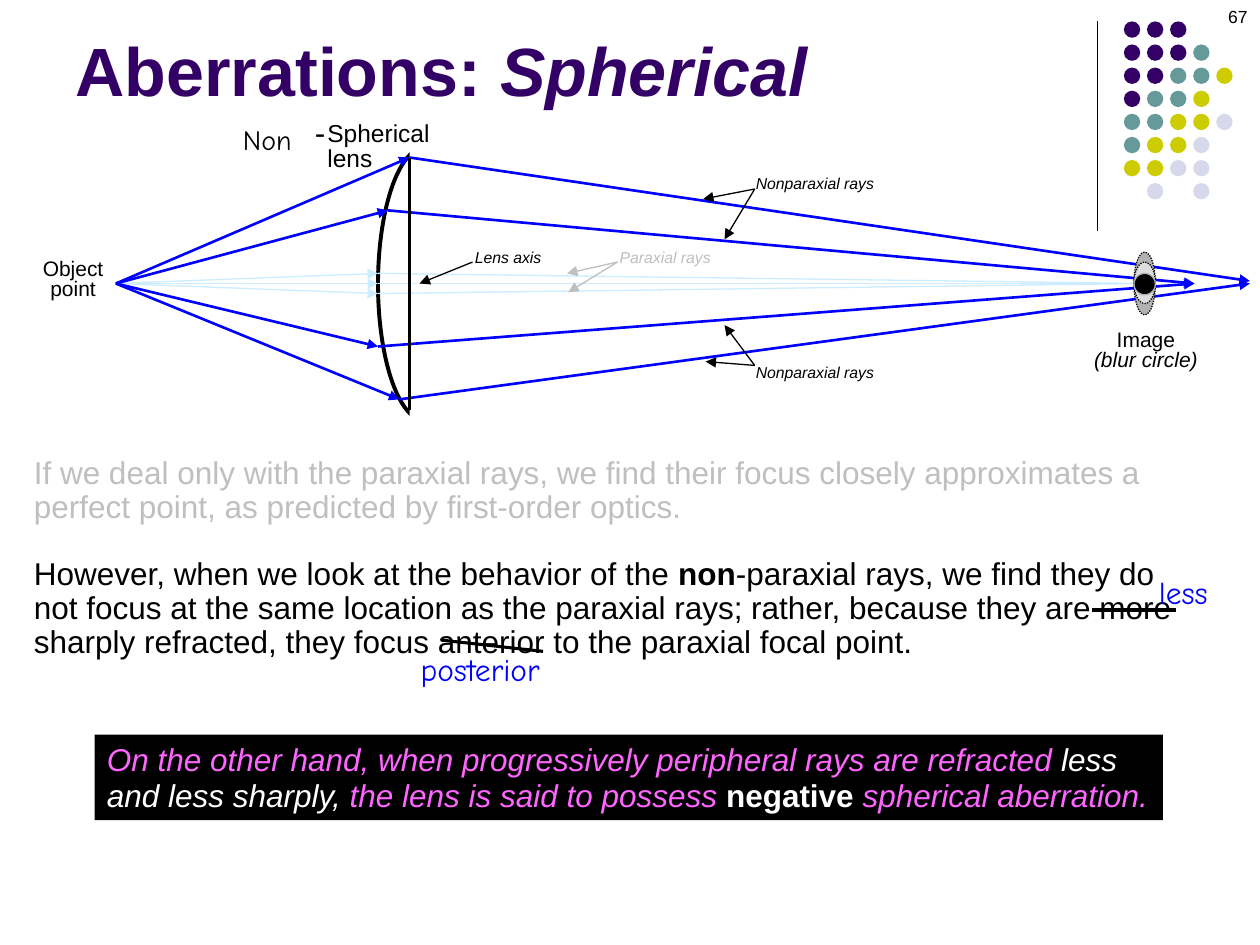
from dataclasses import dataclass

from lxml.etree import SubElement
from pptx import Presentation
from pptx.dml.color import RGBColor
from pptx.enum.dml import MSO_LINE
from pptx.enum.shapes import MSO_CONNECTOR, MSO_SHAPE
from pptx.enum.text import MSO_ANCHOR, PP_ALIGN
from pptx.oxml.ns import qn
from pptx.util import Inches, Pt


@dataclass(frozen=True)
class Theme:
    font: str = "Arial"
    hand: str = "Comic Neue"
    black: str = "000000"
    white: str = "FFFFFF"
    purple: str = "330066"
    teal: str = "669999"
    olive: str = "CCCC00"
    lilac: str = "D8D8EC"
    ray: str = "0000FF"
    paraxial: str = "CCECFF"
    faded: str = "BFBFBF"
    grey: str = "B2B2B2"
    pale: str = "DDDDDD"
    pink: str = "FF66FF"
    title: float = 39
    body: float = 18
    hand_note: float = 16
    lens: float = 14
    label: float = 12
    small: float = 10
    tag: float = 9
    thin: float = 0.75
    thick: float = 2.25


class Deck:
    """Draw styled elements on the current slide."""

    def __init__(self, theme):
        self.theme = theme
        self.prs = Presentation()
        self.prs.slide_width, self.prs.slide_height = Inches(10), Inches(7.5)
        self.slide = None

    def add_slide(self):
        self.slide = self.prs.slides.add_slide(self.prs.slide_layouts[6])

    def shape(self, kind, box, fill=None, line=None, width=0.75, dash=None):
        sp = self.slide.shapes.add_shape(kind, *map(Inches, box))
        sp.shadow.inherit = False
        if fill:
            sp.fill.solid()
            sp.fill.fore_color.rgb = RGBColor.from_string(fill)
        else:
            sp.fill.background()
        if line:
            sp.line.color.rgb = RGBColor.from_string(line)
            sp.line.width = Pt(width)
            if dash:
                sp.line.dash_style = dash
        else:
            sp.line.fill.background()
        return sp

    def line(self, start, end, color, width=0.75, arrow=False):
        ends = map(Inches, (*start, *end))
        cxn = self.slide.shapes.add_connector(MSO_CONNECTOR.STRAIGHT, *ends)
        cxn.line.color.rgb = RGBColor.from_string(color)
        cxn.line.width = Pt(width)
        if arrow:
            SubElement(cxn._element.spPr.find(qn("a:ln")), qn("a:tailEnd"), type="triangle")
        SubElement(cxn._element.spPr, qn("a:effectLst"))

    def fill_text(self, sp, paragraphs, size, color, font=None, align=PP_ALIGN.LEFT,
                  spacing=None, wrap=False, anchor=MSO_ANCHOR.TOP):
        tf = sp.text_frame
        tf.word_wrap, tf.vertical_anchor = wrap, anchor
        for i, runs in enumerate(paragraphs):
            p = tf.add_paragraph() if i else tf.paragraphs[0]
            p.alignment, p.line_spacing = align, spacing
            for text, style, run_color in runs:
                r = p.add_run()
                r.text = text
                r.font.name, r.font.size = font or self.theme.font, Pt(size)
                r.font.bold, r.font.italic = "b" in style, "i" in style
                r.font.color.rgb = RGBColor.from_string(run_color or color)

    def text(self, box, paragraphs, size, color, **options):
        sp = self.slide.shapes.add_textbox(*map(Inches, box))
        self.fill_text(sp, paragraphs, size, color, **options)

    def dots(self, left, top, pitch, size, rows, colors):
        for y, row in enumerate(rows):
            for x, key in enumerate(row):
                if key in colors:
                    box = (left + x * pitch, top + y * pitch, size, size)
                    self.shape(MSO_SHAPE.OVAL, box, colors[key])


def run(text, style="", color=None):
    return text, style, color


def plain(*lines):
    return [[run(line)] for line in lines]


def draw_rays(deck, t):
    source = (0.92, 2.25)
    focus = (9.08, 2.25)
    deck.line((3, 2.25), focus, t.paraxial)
    for y in (2.17, 2.33):
        deck.line(source, (3, y), t.paraxial, arrow=True)
        deck.line((3, y), focus, t.paraxial, arrow=True)
    deck.line((1.08, 2.25), (3, 2.25), t.paraxial, arrow=True)
    for lens_point, end in (
        ((3.25, 1.25), (9.92, 2.23)),
        ((3.17, 3.17), (9.92, 2.25)),
        ((3.08, 1.67), (9.48, 2.25)),
        ((3, 2.75), (9.48, 2.25)),
    ):
        deck.line(source, lens_point, t.ray, 1.5, arrow=True)
        deck.line(lens_point, end, t.ray, 1.5, arrow=True)


def draw_tags(deck, t):
    for text, box, color, start, targets in (
        ("Lens axis", (3.67, 1.92, 0.73, 0.25), t.black, (3.75, 2.08), [(3.33, 2.25)]),
        ("Nonparaxial rays", (5.9, 1.33, 1.17, 0.25), t.black, (5.99, 1.5),
         [(5.58, 1.58), (5.75, 1.9)]),
        ("Nonparaxial rays", (5.9, 2.83, 1.17, 0.25), t.black, (5.99, 2.9),
         [(5.75, 2.58), (5.6, 2.87)]),
        ("Paraxial rays", (4.82, 1.92, 0.93, 0.25), t.faded, (4.9, 2.08),
         [(4.5, 2.17), (4.51, 2.32)]),
    ):
        deck.text(box, [[run(text, "i")]], t.tag, color)
        for target in targets:
            deck.line(start, target, color, arrow=True)


def main():
    t = Theme()
    deck = Deck(t)
    deck.add_slide()

    deck.line((8.71, 0.17), (8.71, 1.83), t.black)
    rows = ("PPP", "PPPT", "PPTTO", "PTTO", "TTOOL", "TOOL", "OOLL", " L L")
    colors = {"P": t.purple, "T": t.teal, "O": t.olive, "L": t.lilac}
    deck.dots(8.92, 0.17, 0.55 / 3, 0.13, rows, colors)

    deck.shape(MSO_SHAPE.OVAL, (3, 1.17, 0.75, 2.17), line=t.black, width=t.thick)
    deck.shape(MSO_SHAPE.RECTANGLE, (3.25, 1, 0.58, 2.5), t.white)
    draw_rays(deck, t)

    deck.text((0.17, 4.38, 9.32, 0.92), [
        [run("However, when we look at the behavior of the "), run("non", "b"),
         run("-paraxial rays, we find they do")],
        *plain("not focus at the same location as the paraxial rays; rather, "
               "because they are more",
               "sharply refracted, they focus anterior to the paraxial focal point."),
    ], t.body, t.black, spacing=0.9)
    deck.text((0.24, 2.02, 0.68, 0.42), plain("Object", "point"), t.label, t.black,
              align=PP_ALIGN.CENTER, spacing=0.8)
    deck.line((3.25, 1.25), (3.25, 3.25), t.black, t.thick)
    deck.text((2.5, 0.92, 1.3, 0.3), plain("Spherical lens"), t.lens, t.black,
              spacing=0.85, wrap=True)
    deck.text((0.17, 3.58, 8.98, 0.64), plain(
        "If we deal only with the paraxial rays, we find their focus closely "
        "approximates a",
        "perfect point, as predicted by first-order optics.",
    ), t.body, t.faded, spacing=0.9)

    deck.line((8.67, 4.84), (9.33, 4.84), t.black, 2)
    deck.text((9.1, 4.5, 0.66, 0.4), plain("less"), t.body, t.ray, font=t.hand)
    deck.text((3.24, 5.11, 1.37, 0.4), plain("posterior"), t.body, t.ray, font=t.hand)

    banner = deck.shape(MSO_SHAPE.RECTANGLE, (0.75, 5.83, 8.48, 0.68), t.black)
    deck.fill_text(banner, [
        [run("On the other hand, when progressively peripheral rays are refracted ", "i"),
         run("less", "i", t.white)],
        [run("and less sharply, ", "i", t.white),
         run("the lens is said to possess ", "i"),
         run("negative ", "b", t.white), run("spherical aberration.", "i")],
    ], t.body, t.pink, spacing=Pt(21))

    deck.text((7.67, 0, 2.33, 0.5), plain("67"), t.small, t.black,
              align=PP_ALIGN.RIGHT, wrap=True)
    for top, height, fill, edge, dash in (
        (2, 0.5, t.grey, t.black, MSO_LINE.ROUND_DOT),
        (2.08, 0.33, t.pale, t.black, MSO_LINE.ROUND_DOT),
        (2.17, 0.17, t.black, t.grey, None),
    ):
        deck.shape(MSO_SHAPE.OVAL, (9, top, 0.17, height), fill, edge, t.thin, dash)
    deck.text((8.58, 2.58, 1.03, 0.42), [[run("Image")], [run("(blur circle)", "i")]],
              t.label, t.black, align=PP_ALIGN.CENTER, spacing=0.8)
    deck.text((1.83, 0.92, 0.69, 0.37), plain("Non"), t.hand_note, t.black, font=t.hand)
    draw_tags(deck, t)
    deck.text((2.4, 0.85, 0.29, 0.4), plain("-"), t.body, t.black)
    deck.text((0.5, 0.17, 8.25, 0.75),
              [[run("Aberrations: ", "b"), run("Spherical", "bi")]],
              t.title, t.purple, wrap=True, anchor=MSO_ANCHOR.BOTTOM)
    deck.line((3.5, 5.08), (4.31, 5.17), t.black, 1.75)

    deck.prs.save("out.pptx")


if __name__ == "__main__":
    main()
